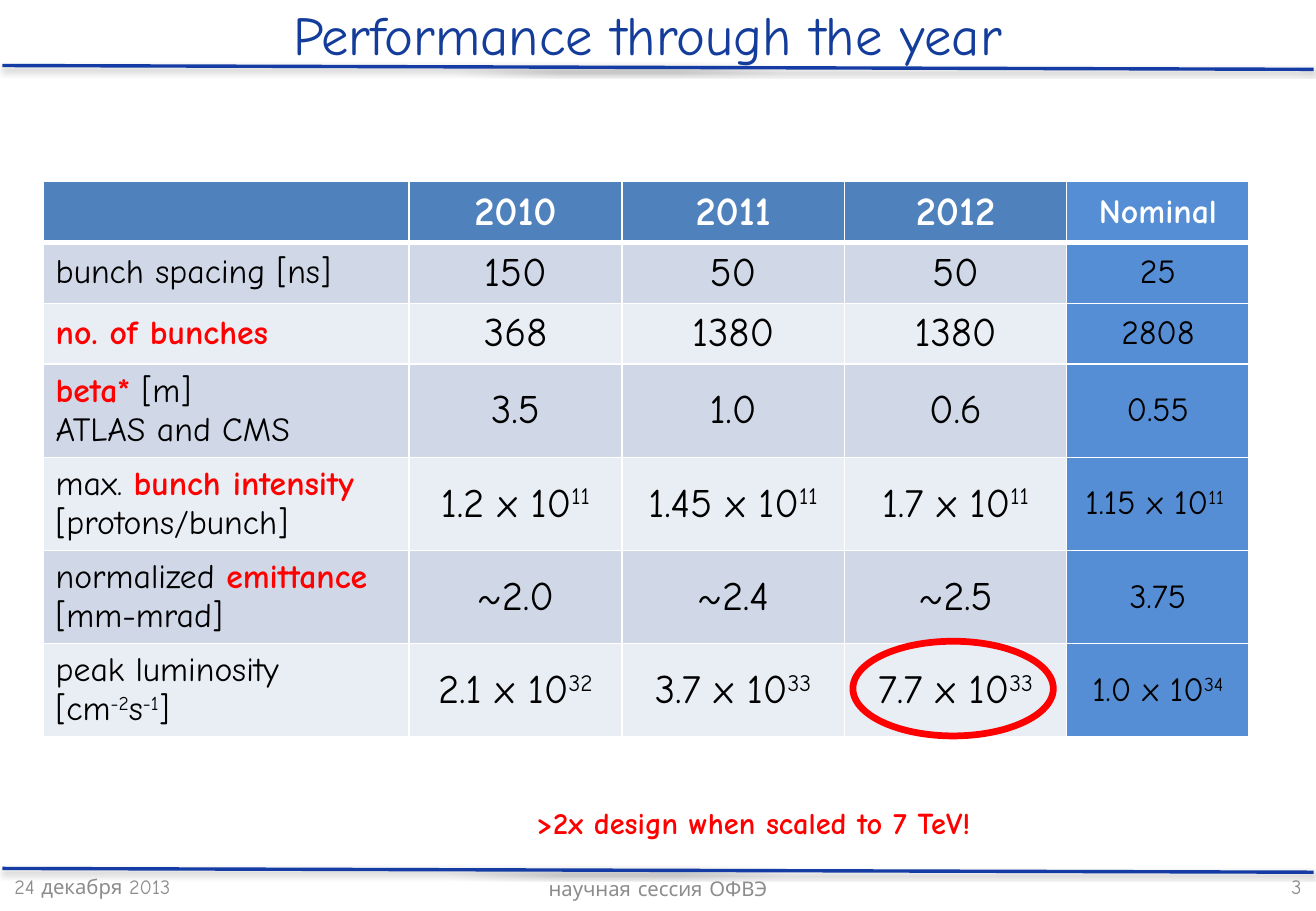
"""Build the slide on yearly performance with its table and highlight."""
from lxml import etree
from pptx import Presentation
from pptx import util as u
from pptx.dml import color
from pptx.enum import shapes, text
from pptx.oxml import ns

FONT = "Comic Neue"
COLORS = {"rule": "143CA4", "title": "143C9A", "footer": "8C8C8C", "page": "898989",
          "header": "4F81BD", "nominal": "558ED5", "odd": "D0D8E8", "even": "E9EDF4",
          "white": "FFFFFF", "black": "000000", "red": "FF0000"}
LEFT, CENTER, RIGHT = text.PP_ALIGN.LEFT, text.PP_ALIGN.CENTER, text.PP_ALIGN.RIGHT
MIDDLE, TOP = text.MSO_ANCHOR.MIDDLE, text.MSO_ANCHOR.TOP
COLUMNS = [7.64, 4.45, 4.65, 4.65, 3.81]
HEIGHTS = [1.25] * 3 + [1.88] * 4
ROWS = [
    ["", "2010", "2011", "2012", "Nominal"],
    ["bunch spacing [ns]", "150", "50", "50", "25"],
    ["_no. of bunches_", "368", "1380", "1380", "2808"],
    ["_beta*_ [m]\nATLAS and CMS", "3.5", "1.0", "0.6", "0.55"],
    ["max. _bunch intensity_\n[protons/bunch]", "1.2 x 10^11^", "1.45 x 10^11^",
     "1.7 x 10^11^", "1.15 x 10^11 ^"],
    ["normalized _emittance _[mm-mrad]", "~2.0", "~2.4", "~2.5", "3.75"],
    ["peak luminosity [cm^-2^s^-1^]", "2.1 x 10^32^", "3.7 x 10^33^",
     "7.7 x 10^33^", "1.0 x 10^34^"],
]


def rgb(name):
    return color.RGBColor.from_string(COLORS[name])


def add_run(p, content, size, tint, bold=False, raised=False):
    r = p.add_run()
    r.text = content
    for key, value in {"name": FONT, "size": u.Pt(size), "bold": bold}.items():
        setattr(r.font, key, value)
    r.font.color.rgb = rgb(tint)
    if raised:
        r.font._element.set("baseline", "30000")


def write(tf, content, size, tint, align=LEFT, bold=False):
    """Write lines where _x_ is bold red and ^x^ is superscript."""
    for n, line in enumerate(content.split("\n")):
        p = tf.add_paragraph() if n else tf.paragraphs[0]
        p.alignment = align
        for i, part in enumerate(line.split("_")):
            for j, bit in enumerate(part.split("^")):
                if bit:
                    add_run(p, bit, size, "red" if i % 2 else tint, bold or i % 2 == 1, j % 2 == 1)


def add_text(s, box, content, size, tint, align=LEFT, bold=False, wrap=True, anchor=MIDDLE):
    tf = s.shapes.add_textbox(*map(u.Cm, box)).text_frame
    for key, value in {"word_wrap": wrap, "vertical_anchor": anchor}.items():
        setattr(tf, key, value)
    write(tf, content, size, tint, align, bold)


def add_rule(s, top):
    line = s.shapes.add_connector(shapes.MSO_CONNECTOR.STRAIGHT, u.Cm(0.05), u.Cm(top),
                                  u.Cm(27.46), u.Cm(top + 0.08))
    line.line.color.rgb = rgb("rule")
    line.line.width = u.Pt(2)
    effects = etree.SubElement(line._element.spPr, ns.qn("a:effectLst"))
    shadow = etree.SubElement(effects, ns.qn("a:outerShdw"), blurRad=str(u.Pt(3.1)),
                              dist=str(u.Pt(1.6)), dir="5400000", rotWithShape="0")
    tone = etree.SubElement(shadow, ns.qn("a:srgbClr"), val=COLORS["black"])
    etree.SubElement(tone, ns.qn("a:alpha"), val="38000")


def set_borders(cell, widths):
    for side, width in widths.items():
        line = etree.SubElement(cell._tc.get_or_add_tcPr(), ns.qn(f"a:ln{side}"), w=str(u.Pt(width)))
        fill = etree.SubElement(line, ns.qn("a:solidFill"))
        etree.SubElement(fill, ns.qn("a:srgbClr"), val=COLORS["white"])


def add_performance_table(s):
    table = s.shapes.add_table(len(ROWS), len(COLUMNS), u.Cm(0.91), u.Cm(3.8),
                               u.Cm(sum(COLUMNS)), u.Cm(sum(HEIGHTS))).table
    for column, width in zip(table.columns, COLUMNS):
        column.width = u.Cm(width)
    for row, height in zip(table.rows, HEIGHTS):
        row.height = u.Cm(height)
    for i, row in enumerate(ROWS):
        band = "header" if i == 0 else "odd" if i % 2 else "even"
        for j, content in enumerate(row):
            cell = table.cell(i, j)
            cell.vertical_anchor = MIDDLE
            set_borders(cell, {"L": 1, "R": 1, "T": 3 if i == 1 else 1, "B": 3 if i == 0 else 1})
            cell.fill.solid()
            cell.fill.fore_color.rgb = rgb("nominal" if j == 4 else band)
            write(cell.text_frame, content, 20 if j in (0, 4) else 24,
                  "black" if i else "white", CENTER if j else LEFT, i == 0)


def add_ring(s, box):
    ring = s.shapes.add_shape(shapes.MSO_SHAPE.OVAL, *map(u.Cm, box))
    ring.shadow.inherit = False
    ring.fill.background()
    ring.line.color.rgb = rgb("red")
    ring.line.width = u.Pt(4)


def main():
    prs = Presentation()
    prs.slide_width, prs.slide_height = u.Cm(27.51), u.Cm(19.05)
    s = prs.slides.add_slide(prs.slide_layouts[6])
    for top in (18.16, 1.37):
        add_rule(s, top)
    add_text(s, (0.05, 18.03, 6.43, 1.02), "24 декабря 2013", 12, "footer")
    add_text(s, (9.4, 18.06, 8.71, 1.02), "научная сессия ОФВЭ", 12, "footer", CENTER)
    add_text(s, (21.03, 18.03, 6.43, 1.02), "3", 12, "page", RIGHT)
    add_text(s, (0, 0.03, 27.46, 1.37), "Performance through the year ", 32.4, "title", CENTER)
    add_performance_table(s)
    add_text(s, (10.97, 16.69, 11.07, 1.02), ">2x design when scaled to 7 TeV!", 18, "red",
             bold=True, wrap=False, anchor=TOP)
    add_ring(s, (17.83, 13.41, 4.19, 1.98))
    prs.save("out.pptx")


if __name__ == "__main__":
    main()
